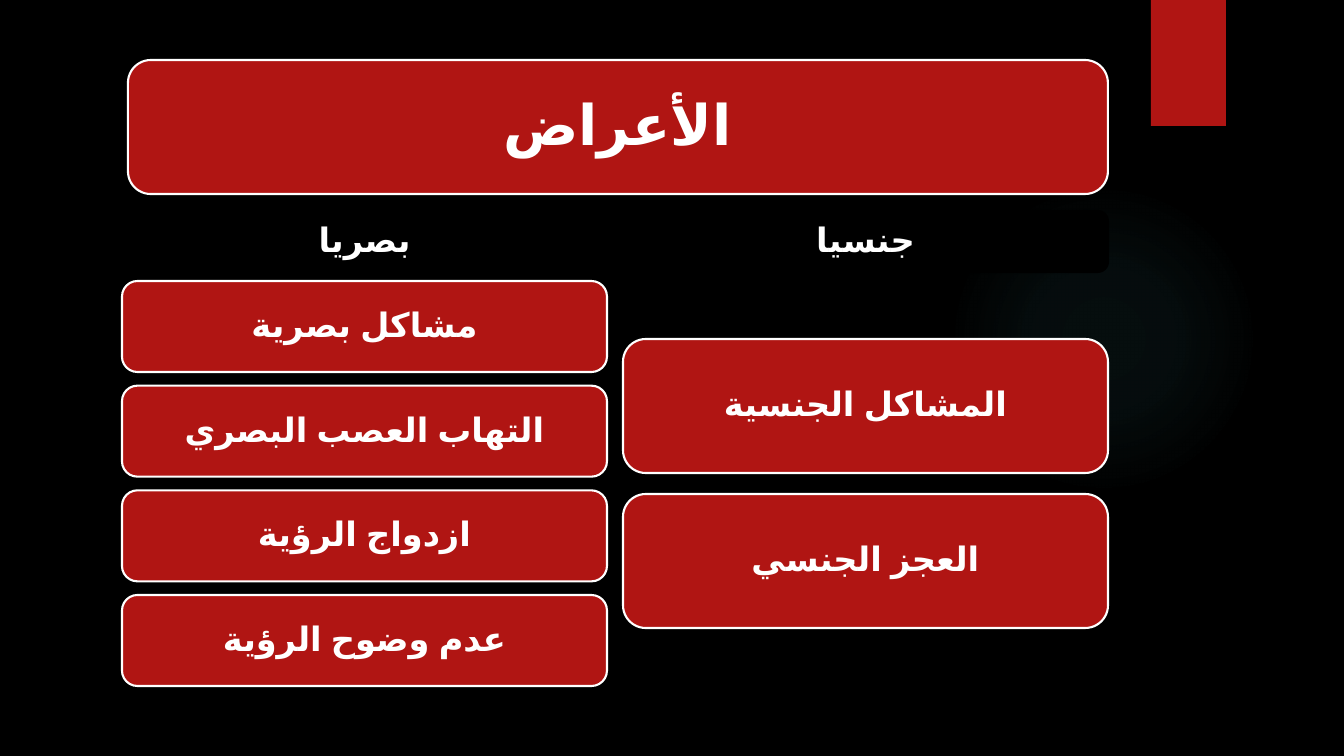
"""Build the symptoms slide: a title banner above two columns of boxes."""
from dataclasses import dataclass

from lxml.etree import SubElement
from pptx import Presentation
from pptx.dml.color import RGBColor
from pptx.enum.lang import MSO_LANGUAGE_ID
from pptx.enum.shapes import MSO_SHAPE
from pptx.enum.text import MSO_ANCHOR, MSO_AUTO_SIZE, PP_ALIGN
from pptx.oxml import parse_xml
from pptx.oxml.ns import nsdecls, qn
from pptx.util import Pt

PX = 12192000 / 1344


@dataclass(frozen=True)
class Theme:
    black: RGBColor = RGBColor(0x00, 0x00, 0x00)
    white: RGBColor = RGBColor(0xFF, 0xFF, 0xFF)
    red: RGBColor = RGBColor(0xB0, 0x15, 0x13)
    glow: RGBColor = RGBColor(0x50, 0xB9, 0xC1)
    font: str = "Arial"
    title_size: int = 40
    body_size: int = 24


theme = Theme()


def add_box(kind, left, top, width, height, fill, line=None):
    box = page.shapes.add_shape(kind, *(round(n * PX) for n in (left, top, width, height)))
    box.shadow.inherit = False
    box.fill.solid()
    box.fill.fore_color.rgb = fill
    if line is None:
        box.line.fill.background()
    else:
        box.line.color.rgb = line
        box.line.width = Pt(1.5)
    if kind == MSO_SHAPE.ROUNDED_RECTANGLE:
        box.adjustments[0] = 0.17
    return box


def write(box, text, size, inset):
    frame = box.text_frame
    frame.text = text
    frame.word_wrap = True
    frame.auto_size = MSO_AUTO_SIZE.NONE
    frame.vertical_anchor = MSO_ANCHOR.MIDDLE
    frame.margin_left = frame.margin_right = round(inset * PX)
    frame.margin_top = frame.margin_bottom = round(inset * PX)
    para = frame.paragraphs[0]
    para.alignment = PP_ALIGN.CENTER
    para.line_spacing = 0.9
    para._p.get_or_add_pPr().set("rtl", "1")
    span = para.runs[0]
    span.font.size = Pt(size)
    span.font.bold = True
    span.font.color.rgb = theme.white
    span.font.name = theme.font
    span.font.language_id = MSO_LANGUAGE_ID.ARABIC
    SubElement(span._r.get_or_add_rPr(), qn("a:cs"), typeface=theme.font)


deck = Presentation()
deck.slide_width = round(1344 * PX)
deck.slide_height = round(756 * PX)
page = deck.slides.add_slide(deck.slide_layouts[5])
page.background.fill.solid()
page.background.fill.fore_color.rgb = theme.black

glow = add_box(MSO_SHAPE.OVAL, 949, 184, 310, 310, theme.glow)
stops = "".join(
    f'<a:gs pos="{place * 1000}"><a:srgbClr val="{theme.glow}">'
    f'<a:alpha val="{alpha * 1000}"/></a:srgbClr></a:gs>'
    for place, alpha in ((0, 7), (36, 6), (69, 0), (100, 0))
)
gradient = parse_xml(
    f'<a:gradFill {nsdecls("a")} rotWithShape="1"><a:gsLst>{stops}</a:gsLst>'
    '<a:path path="circle"><a:fillToRect l="50000" t="50000" r="50000" b="50000"/>'
    "</a:path></a:gradFill>"
)
solid = glow._element.spPr.find(qn("a:solidFill"))
solid.getparent().replace(solid, gradient)

add_box(MSO_SHAPE.RECTANGLE, 1151, 0, 75, 126, theme.red)

banner = add_box(MSO_SHAPE.ROUNDED_RECTANGLE, 128, 60, 980, 134, theme.red, theme.white)
title = page.shapes.title
title.left, title.top = round(134 * PX), round(67 * PX)
title.width, title.height = round(967 * PX), round(121 * PX)
write(title, "الأعراض", theme.title_size, 17)
banner._element.addnext(title._element)

columns = (
    (122, "بصريا", 281, 595, 91,
     ("مشاكل بصرية", "التهاب العصب البصري", "ازدواج الرؤية", "عدم وضوح الرؤية")),
    (623, "جنسيا", 339, 494, 134, ("المشاكل الجنسية", "العجز الجنسي")),
)
for left, heading, first_top, last_top, height, symptoms in columns:
    header = add_box(MSO_SHAPE.ROUNDED_RECTANGLE, left, 211, 485, 61, theme.black, theme.black)
    write(header, heading, theme.body_size, 10)
    step = (last_top - first_top) / (len(symptoms) - 1)
    for row, symptom in enumerate(symptoms):
        box = add_box(MSO_SHAPE.ROUNDED_RECTANGLE, left, first_top + row * step, 485, height,
                      theme.red, theme.white)
        write(box, symptom, theme.body_size, 10)

deck.save("out.pptx")
